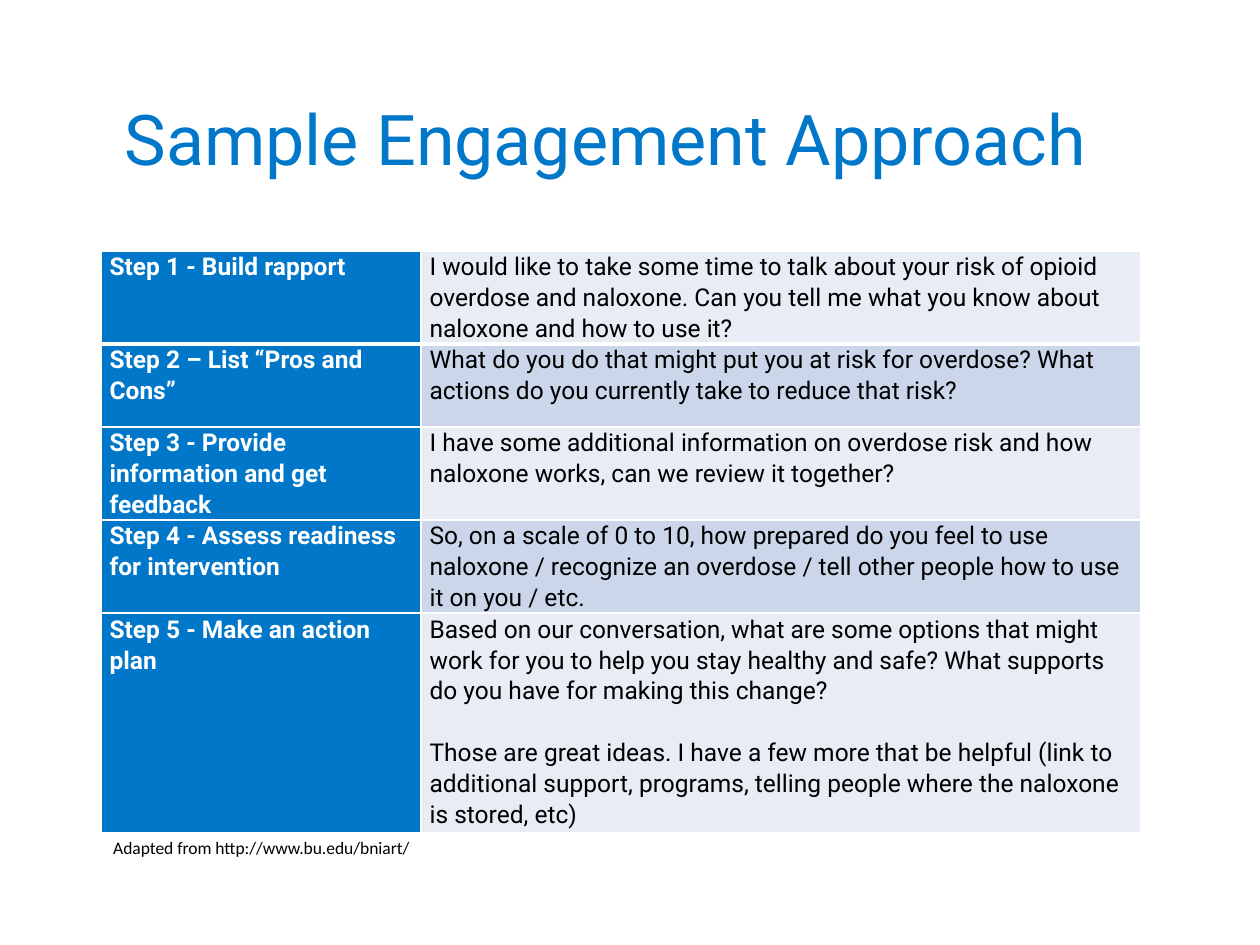
"""Builds the Sample Engagement Approach slide: a title, a five-step table and its source line."""
from lxml import etree
from pptx import Presentation
from pptx import util as u
from pptx.dml.color import RGBColor
from pptx.enum import text
from pptx.oxml import ns

BLUE, WHITE, BLACK = "0077C8", "FFFFFF", "000000"
BANDS = ["E7ECF5", "CCD6EB"]
COLUMN_WIDTHS = [2.54, 5.71]
ROW_HEIGHTS = [0.74, 0.66, 0.72, 0.74, 1.74]
LEFT, TABLE_TOP = 0.8, 1.99
STEPS = [
    ("Step 1 - Build rapport",
     ["I would like to take some time to talk about your risk of opioid overdose and naloxone. "
      "Can you tell me what you know about naloxone and how to use it?"]),
    ("Step 2 – List “Pros and Cons”",
     ["What do you do that might put you at risk for overdose? "
      "What actions do you currently take to reduce that risk?"]),
    ("Step 3 - Provide information and get feedback",
     ["I have some additional information on overdose risk and how naloxone works, "
      "can we review it together?"]),
    ("Step 4 - Assess readiness for intervention",
     ["So, on a scale of 0 to 10, how prepared do you feel to use naloxone / "
      "recognize an overdose / tell other people how to use it on you / etc."]),
    ("Step 5 - Make an action plan",
     ["Based on our conversation, what are some options that might work for you to help you "
      "stay healthy and safe? What supports do you have for making this change?",
      "Those are great ideas. I have a few more that be helpful (link to additional support, "
      "programs, telling people where the naloxone is stored, etc)"]),
]


def paint(target, color):
    """Gives a font or a fill its hex colour."""
    if hasattr(target, "solid"):
        target.solid()
        target = target.fore_color
    else:
        target = target.color
    target.rgb = RGBColor.from_string(color)


def write(frame, paragraphs, color, paragraph_format, font_format):
    """Fills a text frame with equally formatted paragraphs."""
    frame.text = "\n".join(paragraphs)
    for paragraph in frame.paragraphs:
        for name, value in paragraph_format.items():
            setattr(paragraph, name, value)
        for run in paragraph.runs:
            for name, value in font_format.items():
                setattr(run.font, name, value)
            paint(run.font, color)


presentation = Presentation()
presentation.slide_width, presentation.slide_height = u.Inches(10), u.Inches(7.5)
slide = presentation.slides.add_slide(presentation.slide_layouts[5])

title = slide.shapes.title
title.left, title.top, title.width, title.height = map(u.Inches, (0.89, 0.69, 8.17, 1.16))
title_format = {"word_wrap": True, "auto_size": text.MSO_AUTO_SIZE.NONE,
                "vertical_anchor": text.MSO_ANCHOR.MIDDLE, "margin_bottom": u.Inches(0.32)}
for name, value in title_format.items():
    setattr(title.text_frame, name, value)
write(title.text_frame, ["Sample Engagement Approach"], BLUE,
      {"alignment": text.PP_ALIGN.LEFT, "line_spacing": 0.9},
      {"name": "Roboto", "size": u.Pt(40)})

table = slide.shapes.add_table(
    len(STEPS), 2, u.Inches(LEFT), u.Inches(TABLE_TOP),
    u.Inches(sum(COLUMN_WIDTHS)), u.Inches(sum(ROW_HEIGHTS))).table
for column, width in zip(table.columns, COLUMN_WIDTHS):
    column.width = u.Inches(width)
for row, height in zip(table.rows, ROW_HEIGHTS):
    row.height = u.Inches(height)

cell_format = {"margin_left": u.Inches(0.07), "margin_right": u.Inches(0.07),
               "margin_top": 0, "margin_bottom": 0}
for row_index, (step, script) in enumerate(STEPS):
    contents = [([step], WHITE, BLUE, True), (script, BLACK, BANDS[row_index % 2], False)]
    for column_index, (paragraphs, color, background, bold) in enumerate(contents):
        cell = table.cell(row_index, column_index)
        for name, value in cell_format.items():
            setattr(cell, name, value)
        write(cell.text_frame, paragraphs, color, {"line_spacing": 1.07},
              {"name": "Roboto", "size": u.Pt(14), "bold": bold})
        for paragraph in cell.text_frame.paragraphs[1:]:
            paragraph.space_before = u.Pt(17.5)
        properties = cell._tc.get_or_add_tcPr()
        for side in "LRTB":
            thick = (row_index, side) in [(0, "B"), (1, "T")]
            line = etree.SubElement(properties, ns.qn(f"a:ln{side}"), w=str(u.Pt(3 if thick else 1)))
            solid = etree.SubElement(line, ns.qn("a:solidFill"))
            etree.SubElement(solid, ns.qn("a:srgbClr"), val=WHITE)
        paint(cell.fill, background)

source = slide.shapes.add_textbox(
    u.Inches(LEFT), u.Inches(TABLE_TOP + sum(ROW_HEIGHTS)), u.Inches(5.01), u.Inches(0.27))
source.text_frame.word_wrap = True
source.text_frame.auto_size = text.MSO_AUTO_SIZE.SHAPE_TO_FIT_TEXT
write(source.text_frame, ["Adapted from http://www.bu.edu/bniart/"], BLACK, {},
      {"name": "Calibri", "size": u.Pt(10)})

presentation.save("out.pptx")
